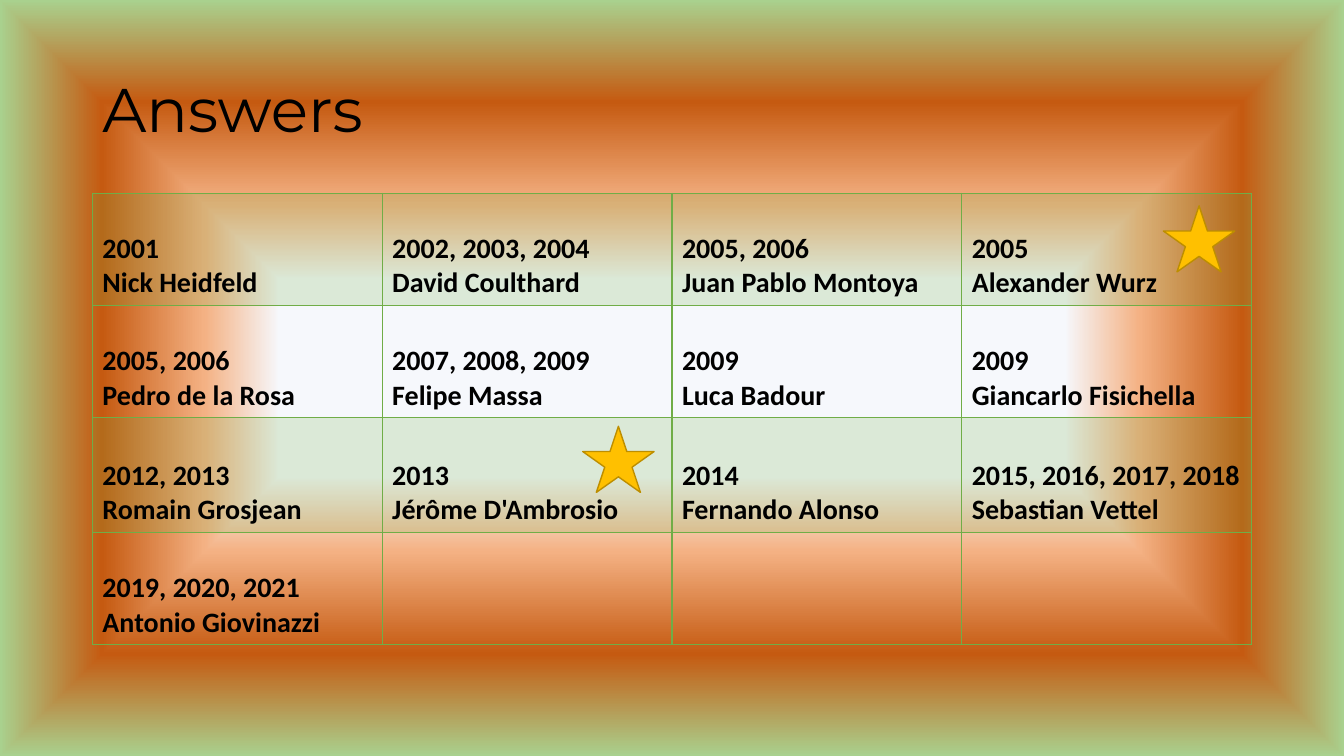
from typing import NamedTuple

from lxml.etree import SubElement
from pptx import Presentation
from pptx.dml.color import RGBColor
from pptx.enum.shapes import MSO_SHAPE
from pptx.enum.text import MSO_ANCHOR
from pptx.oxml import parse_xml
from pptx.oxml.ns import nsdecls, qn
from pptx.util import Pt

EMU_PER_PX = 9525
COLORS = {
    "text": "000000",
    "green": "70AD47",
    "star": "FFC000",
    "star_edge": "BD8E00",
}
BACKDROP = [(26, "F6F8FC"), (46, "F4B183"), (73, "C55A11"), (100, "A9D18E")]
COLUMN_WIDTH = 276
ROW_HEIGHTS = [107, 107, 109, 107]
COLUMN_COUNT = 4


class Driver(NamedTuple):
    years: str
    name: str


class Star(NamedTuple):
    left: int
    top: int


DRIVERS = [
    Driver("2001", "Nick Heidfeld"),
    Driver("2002, 2003, 2004", "David Coulthard"),
    Driver("2005, 2006", "Juan Pablo Montoya"),
    Driver("2005", "Alexander Wurz"),
    Driver("2005, 2006", "Pedro de la Rosa"),
    Driver("2007, 2008, 2009", "Felipe Massa"),
    Driver("2009", "Luca Badour"),
    Driver("2009", "Giancarlo Fisichella"),
    Driver("2012, 2013", "Romain Grosjean"),
    Driver("2013", "Jérôme D'Ambrosio"),
    Driver("2014", "Fernando Alonso"),
    Driver("2015, 2016, 2017, 2018", "Sebastian Vettel"),
    Driver("2019, 2020, 2021", "Antonio Giovinazzi"),
]
STARS = [Star(1108, 196), Star(555, 406)]


def px(length: int) -> int:
    return length * EMU_PER_PX


def rgb(key: str) -> RGBColor:
    return RGBColor.from_string(COLORS[key])


def add_run(paragraph, text: str, font: str, size: int, bold: bool) -> None:
    run = paragraph.add_run()
    run.text = text
    run.font.name = font
    run.font.size = Pt(size)
    run.font.bold = bold
    run.font.color.rgb = rgb("text")


def paint_backdrop(slide) -> None:
    stops = "".join(
        f'<a:gs pos="{position * 1000}"><a:srgbClr val="{color}"/></a:gs>'
        for position, color in BACKDROP
    )
    backdrop = parse_xml(
        f'<p:bg {nsdecls("p", "a")}><p:bgPr><a:gradFill rotWithShape="1">'
        f'<a:gsLst>{stops}</a:gsLst><a:path path="rect">'
        '<a:fillToRect l="50000" t="50000" r="50000" b="50000"/></a:path>'
        '</a:gradFill><a:effectLst/></p:bgPr></p:bg>'
    )
    slide._element.cSld.insert(0, backdrop)


def add_title(slide) -> None:
    title = slide.shapes.add_textbox(px(88), px(38), px(1104), px(139))
    frame = title.text_frame
    frame.word_wrap = True
    frame.vertical_anchor = MSO_ANCHOR.MIDDLE
    frame.paragraphs[0].line_spacing = 0.9
    add_run(frame.paragraphs[0], "Answers", "Montserrat", 44, False)


def style_cell(cell, tinted: bool) -> None:
    cell.vertical_anchor = MSO_ANCHOR.BOTTOM
    properties = cell._tc.get_or_add_tcPr()
    if tinted:
        cell.fill.solid()
        cell.fill.fore_color.rgb = rgb("green")
        tint = properties.find(".//" + qn("a:srgbClr"))
        SubElement(tint, qn("a:alpha"), val="20000")
    else:
        cell.fill.background()
    for index, side in enumerate(("lnL", "lnR", "lnT", "lnB")):
        border = parse_xml(
            f'<a:{side} {nsdecls("a")} w="{Pt(1)}"><a:solidFill>'
            f'<a:srgbClr val="{COLORS["green"]}"/></a:solidFill></a:{side}>'
        )
        properties.insert(index, border)


def add_answers(slide) -> None:
    answers = slide.shapes.add_table(
        len(ROW_HEIGHTS), COLUMN_COUNT, px(88), px(184),
        px(COLUMN_WIDTH * COLUMN_COUNT), px(sum(ROW_HEIGHTS)),
    ).table
    for column in answers.columns:
        column.width = px(COLUMN_WIDTH)
    for index, height in enumerate(ROW_HEIGHTS):
        answers.rows[index].height = px(height)
        for cell in answers.rows[index].cells:
            style_cell(cell, index % 2 == 0)
    for index, driver in enumerate(DRIVERS):
        frame = answers.cell(*divmod(index, COLUMN_COUNT)).text_frame
        add_run(frame.paragraphs[0], driver.years, "Calibri", 20, True)
        add_run(frame.add_paragraph(), driver.name, "Calibri", 20, True)


def add_star(slide, star: Star) -> None:
    marker = slide.shapes.add_shape(
        MSO_SHAPE.STAR_5_POINT, px(star.left), px(star.top), px(68), px(63)
    )
    marker.shadow.inherit = False
    marker.fill.solid()
    marker.fill.fore_color.rgb = rgb("star")
    marker.line.color.rgb = rgb("star_edge")
    marker.line.width = Pt(1)


def main() -> None:
    deck = Presentation()
    deck.slide_width = px(1280)
    deck.slide_height = px(720)
    slide = deck.slides.add_slide(deck.slide_layouts[6])
    paint_backdrop(slide)
    add_title(slide)
    add_answers(slide)
    for star in STARS:
        add_star(slide, star)
    deck.save("out.pptx")


if __name__ == "__main__":
    main()
